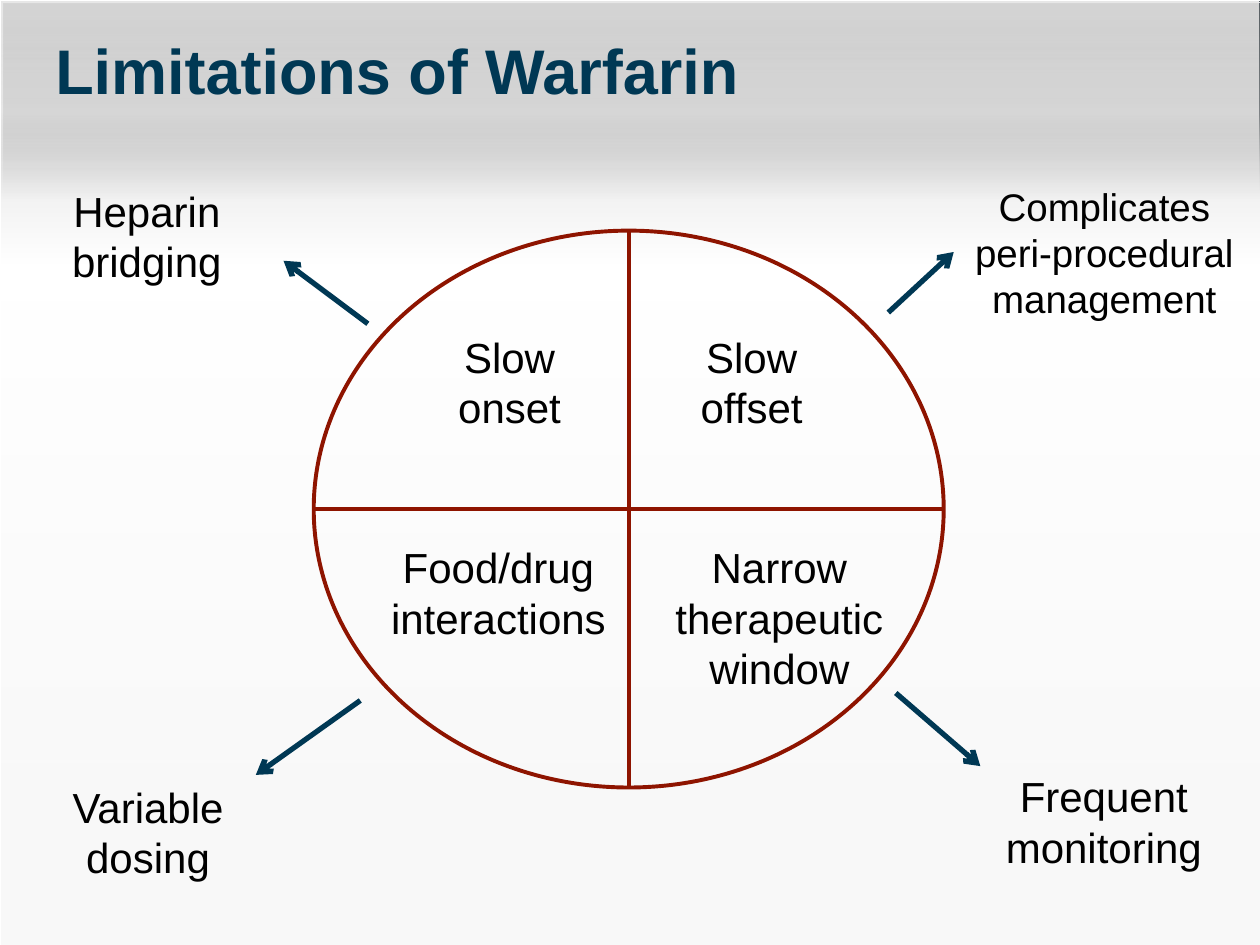
from dataclasses import dataclass
from lxml.etree import SubElement as Sub
from pptx import Presentation
from pptx.dml.color import RGBColor as Rgb
from pptx.enum.shapes import MSO_CONNECTOR as Conn, MSO_SHAPE as Geo
from pptx.enum.text import MSO_ANCHOR as Anchor, MSO_AUTO_SIZE as Auto, PP_ALIGN as Align
from pptx.oxml.ns import qn
from pptx.util import Pt


@dataclass(frozen=True)
class Theme:
    font: str = "Arial"
    navy: str = "003854"
    red: str = "8E1400"
    ink: str = "000000"
    edge: str = "444E54"
    white: str = "FFFFFF"
    head: float = 36
    body: float = 24
    small: float = 22
    fade: tuple = (
        (0, "808080", 18),
        (12, "B3B3B3", 31),
        (21, "F2F2F2", 100),
        (28, "FFFFFF", 100),
        (85, "F8F8F8", 100),
    )


LOOK = Theme()
WIDE, HIGH = 720, 540

LABELS = (
    ("Slow onset", (246.2, 185.8, 90, 65.5), LOOK.body),
    ("Slow offset", (384.5, 185.8, 90, 65.5), LOOK.body),
    ("Food/drug interactions", (203.8, 306, 162, 65.5), LOOK.body),
    ("Narrow therapeutic window", (364.3, 306, 162, 94.5), LOOK.body),
    ("Heparin bridging", (18, 102.2, 131.8, 65.5), LOOK.body),
    ("Variable dosing", (18.7, 442.8, 131.8, 65.5), LOOK.body),
    ("Frequent monitoring", (549.4, 437, 162.7, 65.5), LOOK.body),
    ("Complicates peri-procedural management", (540.7, 100.8, 180.7, 87), LOOK.small),
)
ARROWS = (
    (210.2, 185, 162, 149),
    (511.9, 396, 560.2, 437.8),
    (507.6, 178.6, 545, 144),
    (205.9, 400.3, 146.2, 442.8),
)


def put(item, vals):
    for name, val in vals.items():
        setattr(item, name, val)


def pts(vals):
    return [Pt(val) for val in vals]


def stroke(line, color, width):
    line.color.rgb = Rgb.from_string(color)
    line.width = Pt(width)


def shape(slide, geo, box, color, width):
    item = slide.shapes.add_shape(geo, *pts(box))
    item.shadow.inherit = False
    item.fill.background()
    stroke(item.line, color, width)
    return item


def shade(item):
    item.fill.gradient()
    item.fill.gradient_angle = 270
    stops = item._element.spPr.find(qn("a:gradFill")).find(qn("a:gsLst"))
    for old in list(stops):
        stops.remove(old)
    for pos, color, alpha in LOOK.fade:
        stop = Sub(stops, qn("a:gs"), pos=str(pos * 1000))
        tint = Sub(stop, qn("a:srgbClr"), val=color)
        if alpha < 100:
            Sub(tint, qn("a:alpha"), val=str(alpha * 1000))


def line(slide, ends, color, width, tip=False):
    item = slide.shapes.add_connector(Conn.STRAIGHT, *pts(ends))
    stroke(item.line, color, width)
    if tip:
        Sub(item.line._get_or_add_ln(), qn("a:tailEnd"), type="arrow")
    Sub(item._element.spPr, qn("a:effectLst"))


def text(slide, words, box, font, frame, para):
    body = slide.shapes.add_textbox(*pts(box)).text_frame
    put(body, {"word_wrap": True, **frame})
    first = body.paragraphs[0]
    put(first, para)
    run = first.add_run()
    run.text = words
    color = font.pop("color")
    put(run.font, {"name": LOOK.font, **font})
    run.font.color.rgb = Rgb.from_string(color)


def wheel(slide, left, top, wide, high):
    shape(slide, Geo.OVAL, (left, top, wide, high), LOOK.red, 2.25)
    mid, row = left + wide / 2, top + high / 2
    line(slide, (mid, top, mid, top + high), LOOK.red, 2)
    line(slide, (left, row, left + wide, row), LOOK.red, 2)


def main():
    deck = Presentation()
    put(deck, {"slide_width": Pt(WIDE), "slide_height": Pt(HIGH)})
    slide = deck.slides.add_slide(deck.slide_layouts[6])

    shape(slide, Geo.RECTANGLE, (0, 0, WIDE, HIGH), LOOK.edge, 1.5)
    for shift in (1.5, 0):
        shade(shape(slide, Geo.RECTANGLE, (shift, shift, WIDE, HIGH), LOOK.white, 0.25))

    text(slide, "Limitations of Warfarin", (24.5, 7.9, 671, 68.4),
         {"size": Pt(LOOK.head), "bold": True, "color": LOOK.navy},
         {"vertical_anchor": Anchor.MIDDLE}, {"line_spacing": 0.9})
    wheel(slide, 179.3, 131.8, 360, 318.2)
    for words, box, size in LABELS:
        text(slide, words, box, {"size": Pt(size), "color": LOOK.ink},
             {"auto_size": Auto.SHAPE_TO_FIT_TEXT}, {"alignment": Align.CENTER})
    for ends in ARROWS:
        line(slide, ends, LOOK.navy, 3, tip=True)
    deck.save("out.pptx")


if __name__ == "__main__":
    main()
